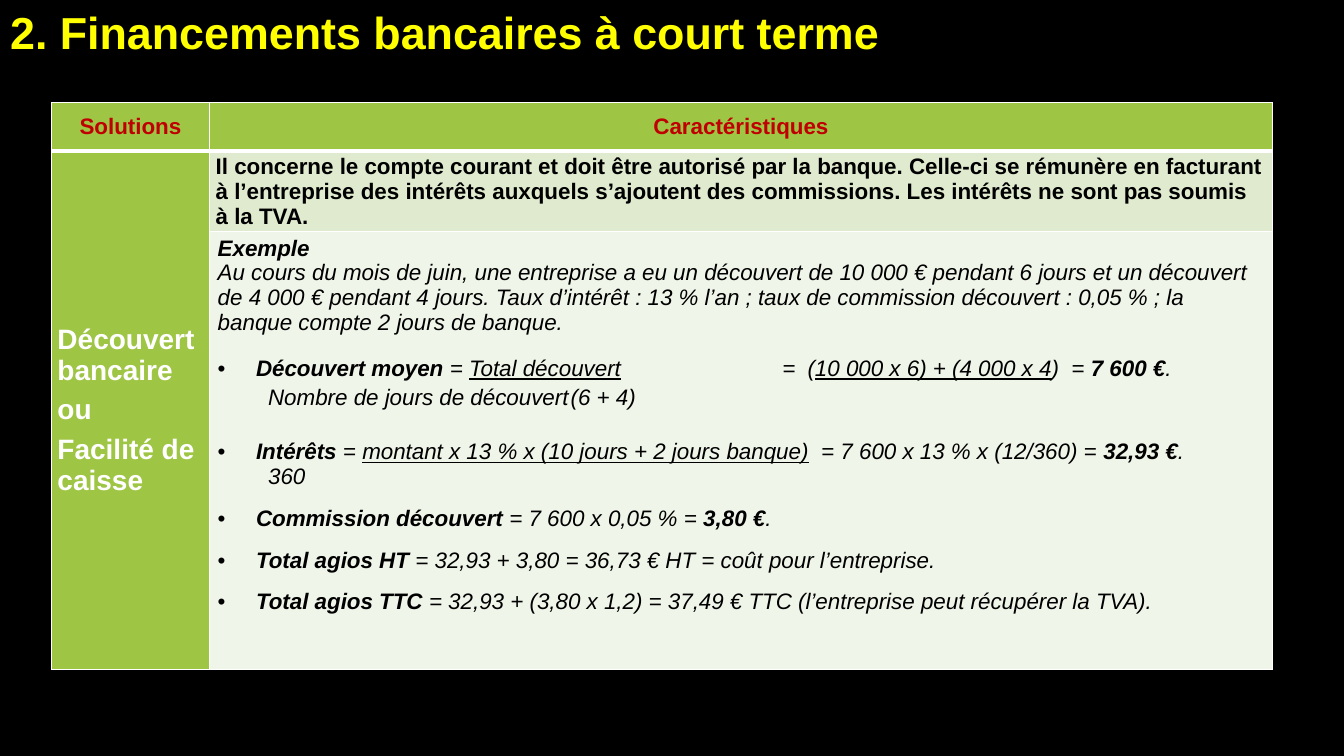
from dataclasses import dataclass

from lxml.etree import SubElement
from pptx import Presentation
from pptx.dml.color import RGBColor
from pptx.enum.text import MSO_ANCHOR, MSO_AUTO_SIZE, PP_ALIGN
from pptx.oxml.ns import qn
from pptx.util import Inches, Pt


@dataclass(frozen=True)
class Theme:
    """Hold the colours, font and type sizes."""
    font: str = "Arial"
    back: str = "000000"
    title: str = "FFFF00"
    head: str = "C00000"
    text: str = "000000"
    white: str = "FFFFFF"
    green: str = "9EC544"
    pale: str = "DFEACF"
    light: str = "F0F5E9"
    big: int = 32
    mid: int = 20
    small: int = 16


THEME = Theme()
STOPS = (2.49, 5.41, 5.6, 5.85, 6.76)
BULLET = 0.38
TERMS = ("Découvert bancaire", "ou", "Facilité de caisse")
INTRO = ("Il concerne le compte courant et doit être autorisé par la banque. "
         "Celle-ci se rémunère en facturant à l’entreprise des intérêts auxquels "
         "s’ajoutent des commissions. Les intérêts ne sont pas soumis à la TVA.")
CASE = ("Au cours du mois de juin, une entreprise a eu un découvert de 10 000 € "
        "pendant 6 jours et un découvert de 4 000 € pendant 4 jours. "
        "Taux d’intérêt : 13 % l’an ; taux de commission découvert : 0,05 % ; "
        "la banque compte 2 jours de banque.")
MEAN = (("Découvert moyen ", "b"), ("= ", ""), ("Total découvert\t", "u"),
        ("\t=\t(", ""), ("10 000 x 6) + (4 000 x 4", "u"), (")  = ", ""),
        ("7 600 €", "b"), (".", ""))
COST = (("Intérêts", "b"), (" = ", ""),
        ("montant x 13 % x (10 jours + 2 jours banque)", "u"),
        ("  = 7 600 x 13 % x (12/360) = ", ""), ("32,93 €", "b"), (".", ""))
TOTALS = (
    (("Commission découvert ", "b"), ("= 7 600 x 0,05 % = ", ""),
     ("3,80 €", "b"), (".", "")),
    (("Total agios HT ", "b"),
     ("= 32,93 + 3,80 = 36,73 € HT = coût pour l’entreprise.", "")),
    (("Total agios TTC ", "b"),
     ("= 32,93 + (3,80 x 1,2) = 37,49 € TTC (l’entreprise peut récupérer la TVA).", "")),
)


def write(para, text, size=THEME.small, color=THEME.text, bold=False,
          italic=False, line=False):
    """Add one formatted run to a paragraph."""
    run = para.add_run()
    run.text = text
    font = run.font
    font.name, font.size = THEME.font, Pt(size)
    font.bold, font.italic, font.underline = bold, italic, line
    font.color.rgb = RGBColor.from_string(color)


def start(frame, before=0, after=0, align=PP_ALIGN.LEFT):
    """Return the next paragraph of a frame, with its spacing."""
    para = frame.paragraphs[0]
    if para.runs:
        para = frame.add_paragraph()
    para.space_before, para.space_after = Pt(before), Pt(after)
    para.alignment = align
    return para


def indent(para, bullet=False, stops=()):
    """Set the bullet and tab stops of a paragraph."""
    props = para._p.get_or_add_pPr()
    left = Inches(BULLET) if bullet else 0
    props.set("marL", str(left))
    props.set("indent", str(-left))
    if bullet:
        SubElement(props, qn("a:buFont"), typeface=THEME.font)
        SubElement(props, qn("a:buChar"), char="•")
    if stops:
        tabs = SubElement(props, qn("a:tabLst"))
        for stop in stops:
            SubElement(tabs, qn("a:tab"), pos=str(Inches(stop)), algn="l")


def add_point(frame, parts, before, stops=(), align=PP_ALIGN.LEFT):
    """Add a bulleted line of mixed runs."""
    para = start(frame, before, align=align)
    indent(para, True, stops)
    for text, style in parts:
        write(para, text, bold=style == "b", italic=True, line=style == "u")


def add_lower(frame, text, stops, before=0):
    """Add the lower line of a fraction, placed by tabs."""
    para = start(frame, before)
    indent(para, stops=stops)
    write(para, text, italic=True)


def style_cell(cell, fill, head=False):
    """Fill a cell and draw its white borders."""
    cell.fill.solid()
    cell.fill.fore_color.rgb = RGBColor.from_string(fill)
    cell.vertical_anchor = MSO_ANCHOR.MIDDLE
    cell.margin_left = cell.margin_right = Inches(0.06)
    cell.margin_top = cell.margin_bottom = 0
    props = cell._tc.get_or_add_tcPr()
    for spot, side in enumerate("LRTB"):
        width = Pt(3 if head and side == "B" else 1)
        edge = SubElement(props, qn(f"a:ln{side}"), w=str(width))
        paint = SubElement(edge, qn("a:solidFill"))
        SubElement(paint, qn("a:srgbClr"), val=THEME.white)
        props.insert(spot, edge)


def add_title(slide, text):
    """Place and format the title."""
    title = slide.shapes.title
    title.left, title.top = 0, 0
    title.width, title.height = Inches(13.33), Inches(0.64)
    frame = title.text_frame
    frame.auto_size = MSO_AUTO_SIZE.NONE
    frame.vertical_anchor = MSO_ANCHOR.TOP
    write(start(frame, 3, 3), text, THEME.big, THEME.title, bold=True)


def add_grid(slide):
    """Add the styled table and return it."""
    cols, rows = (1.57, 10.54), (0.48, 0.8, 4.34)
    grid = slide.shapes.add_table(
        len(rows), len(cols), Inches(0.51), Inches(1.02),
        Inches(sum(cols)), Inches(sum(rows))).table
    for col, width in zip(grid.columns, cols):
        col.width = Inches(width)
    fills = (THEME.green, THEME.pale, THEME.light)
    for spot, (row, height) in enumerate(zip(grid.rows, rows)):
        row.height = Inches(height)
        for cell, fill in zip(row.cells, (THEME.green, fills[spot])):
            style_cell(cell, fill, head=spot == 0)
    grid.cell(1, 0).merge(grid.cell(2, 0))
    return grid


def add_case(cell):
    """Write the worked example."""
    cell.vertical_anchor = MSO_ANCHOR.TOP
    cell.margin_left = cell.margin_right = Inches(0.08)
    cell.margin_top = cell.margin_bottom = Inches(0.04)
    frame = cell.text_frame
    write(start(frame), "Exemple", bold=True, italic=True)
    write(start(frame, after=12), CASE, italic=True)
    add_point(frame, MEAN, 3, STOPS[1:4])
    add_lower(frame, "\tNombre de jours de découvert\t(6 + 4)",
              (STOPS[0], STOPS[4]), 3)
    add_point(frame, COST, 21)
    add_lower(frame, "\t360", (2.94,))
    for parts in TOTALS:
        add_point(frame, parts, 12, align=PP_ALIGN.JUSTIFY)


def main():
    """Build the slide and save it."""
    deck = Presentation()
    deck.slide_width, deck.slide_height = Inches(13.33), Inches(7.5)
    slide = deck.slides.add_slide(deck.slide_layouts[5])
    slide.background.fill.solid()
    slide.background.fill.fore_color.rgb = RGBColor.from_string(THEME.back)
    add_title(slide, "2. Financements bancaires à court terme")
    grid = add_grid(slide)
    for col, text in enumerate(("Solutions", "Caractéristiques")):
        para = start(grid.cell(0, col).text_frame, 3, 3, PP_ALIGN.CENTER)
        write(para, text, color=THEME.head, bold=True)
    for term in TERMS:
        para = start(grid.cell(1, 0).text_frame, 3, 3)
        write(para, term, THEME.mid, THEME.white, bold=True)
    write(start(grid.cell(1, 1).text_frame, 6, 6), INTRO, bold=True)
    add_case(grid.cell(2, 1))
    deck.save("out.pptx")


if __name__ == "__main__":
    main()
